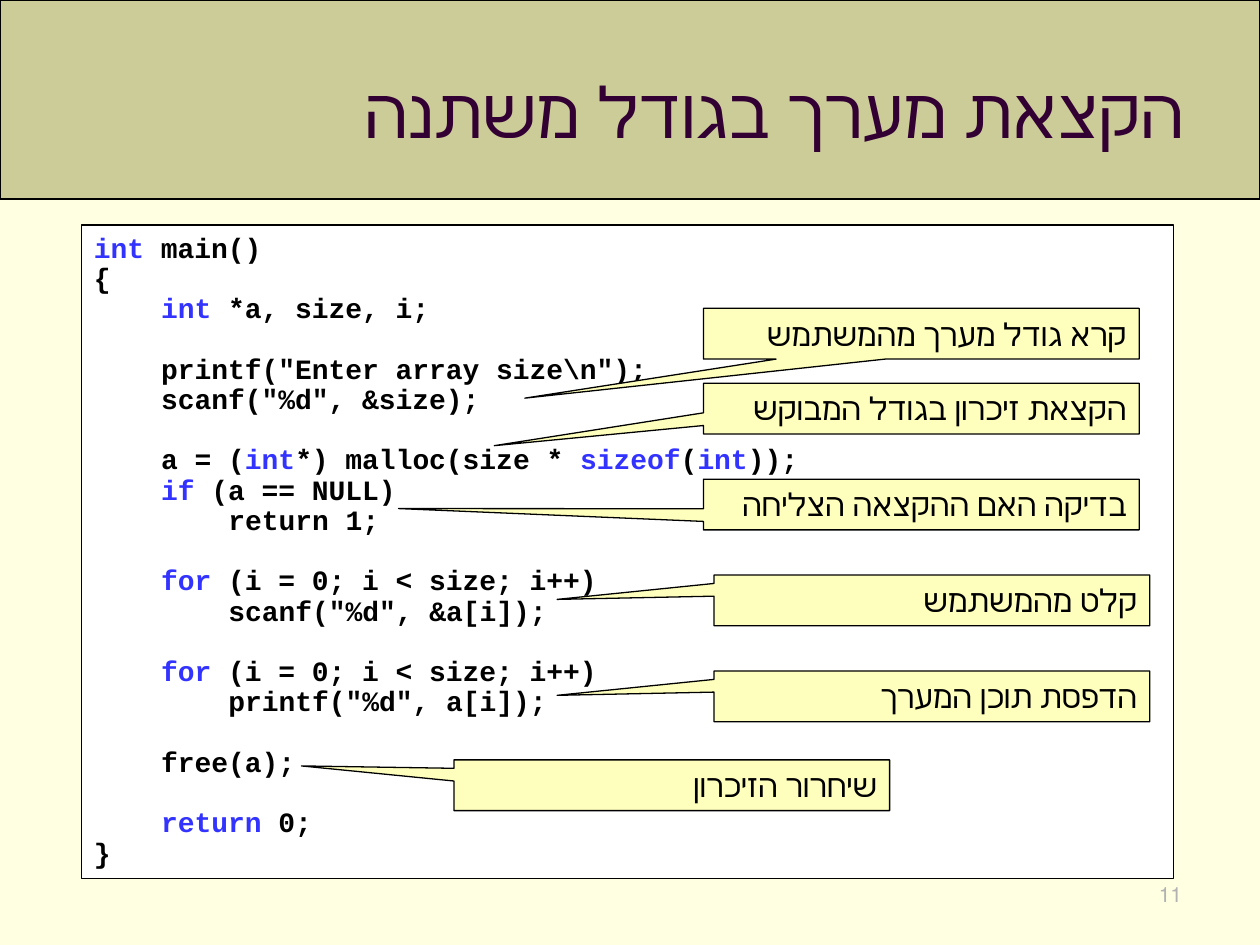
from dataclasses import dataclass

from pptx import Presentation
from pptx.dml.color import RGBColor
from pptx.enum.shapes import MSO_SHAPE as Shape
from pptx.enum.text import MSO_ANCHOR as Anchor, PP_ALIGN as Align
from pptx.util import Pt

# Content: backticks enclose the keywords; (indent level, text), None is a gap
TITLE = "הקצאת מערך בגודל משתנה"
PAGE = "11"
CODE = [
    (0, "`int `main()"),
    (0, "{"),
    (1, "`int `*a, size, i;"),
    None,
    (1, 'printf("Enter array size\\n");'),
    (1, 'scanf("%d", &size);'),
    None,
    (1, "a = (`int`*) malloc(size * `sizeof`(`int`));"),
    (1, "`if `(a == NULL)"),
    (2, "return 1;"),
    None,
    (1, "`for` (i = 0; i < size; i++)"),
    (2, 'scanf("%d", &a[i]);'),
    None,
    (1, "`for `(i = 0; i < size; i++)"),
    (2, 'printf("%d", a[i]);'),
    None,
    (1, "free(a);"),
    None,
    (1, "`return `0;"),
    (0, "}"),
]
# Text, left, top, and the pointer tip relative to the callout's centre
CALLOUTS = [
    ("קרא גודל מערך מהמשתמש", 402, 176.2, (-0.91, 1.27)),
    ("הקצאת זיכרון בגודל המבוקש", 402, 219, (-0.98, 0.73)),
    ("בדיקה האם ההקצאה הצליחה", 402, 273.8, (-1.2, 0.08)),
    ("קלט מהמשתמש", 408, 328.6, (-0.86, -0.02)),
    ("הדפסת תוכן המערך", 408, 383.4, (-0.86, -0.02)),
    ("שיחרור הזיכרון", 259.4, 434.2, (-0.85, -0.38)),
]


@dataclass(frozen=True)
class Theme:
    page: str = "FFFFE1"
    band: str = "CCCC99"
    title: str = "330033"
    panel: str = "FFFFFF"
    callout: str = "FFFFBD"
    ink: str = "000000"
    keyword: str = "3333FF"
    muted: str = "B2B2B2"
    title_font: str = "Times New Roman"
    body_font: str = "Arial"
    code_font: str = "Courier New"
    title_size: float = 40
    callout_size: float = 18
    code_size: float = 16
    page_size: float = 12
    code_pitch: float = 17.28  # distance between code lines
    code_indent: float = 38.4  # four monospaced characters


theme = Theme()


def add_run(paragraph, text, font, size, color, bold=False):
    run = paragraph.add_run()
    run.text = text
    run.font.name, run.font.size, run.font.bold = font, Pt(size), bold
    run.font.color.rgb = RGBColor.from_string(color)


def write_hebrew(frame, text, font, size, color):
    frame.word_wrap = True
    paragraph = frame.paragraphs[0]
    paragraph.alignment = Align.RIGHT
    paragraph._p.get_or_add_pPr().set("rtl", "1")
    add_run(paragraph, text, font, size, color)


def add_box(slide, preset, box, fill):
    shape = slide.shapes.add_shape(preset, *map(Pt, box))
    shape.shadow.inherit = False
    shape.fill.solid()
    shape.fill.fore_color.rgb = RGBColor.from_string(fill)
    shape.line.color.rgb = RGBColor.from_string(theme.ink)
    shape.line.width = Pt(0.75)
    return shape


def write_code(frame):
    frame.word_wrap = True
    frame.vertical_anchor = Anchor.TOP
    frame.margin_top = Pt(4.8)
    paragraph, gap = frame.paragraphs[0], 0
    for number, line in enumerate(CODE):
        if line is None:
            gap = theme.code_pitch
            continue
        if number:
            paragraph = frame.add_paragraph()
        level, text = line
        paragraph.alignment = Align.LEFT
        paragraph.line_spacing = Pt(theme.code_pitch)
        paragraph.space_before = Pt(gap)
        paragraph._p.get_or_add_pPr().set("marL", str(Pt(level * theme.code_indent)))
        for index, part in enumerate(text.split("`")):
            if part:
                color = theme.keyword if index % 2 else theme.ink
                add_run(paragraph, part, theme.code_font, theme.code_size, color, True)
        gap = 0


def main():
    deck = Presentation()
    deck.slide_width, deck.slide_height = Pt(720), Pt(540)
    slide = deck.slides.add_slide(deck.slide_layouts[5])
    slide.background.fill.solid()
    slide.background.fill.fore_color.rgb = RGBColor.from_string(theme.page)

    # Title on its band
    band = add_box(slide, Shape.RECTANGLE, (0, 0, 720, 113.8), theme.band)
    title = slide.shapes.title
    title._element.addprevious(band._element)
    title.left, title.top, title.width, title.height = map(Pt, (36, 18, 648, 90))
    title.text_frame.vertical_anchor = Anchor.MIDDLE
    write_hebrew(title.text_frame, TITLE, theme.title_font, theme.title_size, theme.title)

    # Page number
    page = slide.shapes.add_textbox(*map(Pt, (514.8, 500.4, 167.8, 28.8)))
    write_hebrew(page.text_frame, PAGE, theme.body_font, theme.page_size, theme.muted)

    # Code panel
    panel = add_box(slide, Shape.RECTANGLE, (46.6, 128.6, 624, 373.6), theme.panel)
    write_code(panel.text_frame)

    # Callouts
    for text, left, top, tip in CALLOUTS:
        callout = add_box(slide, Shape.RECTANGULAR_CALLOUT, (left, top, 249, 29), theme.callout)
        callout.adjustments[0], callout.adjustments[1] = tip
        callout.text_frame.vertical_anchor = Anchor.TOP
        write_hebrew(callout.text_frame, text, theme.body_font, theme.callout_size, theme.ink)

    deck.save("out.pptx")


if __name__ == "__main__":
    main()
